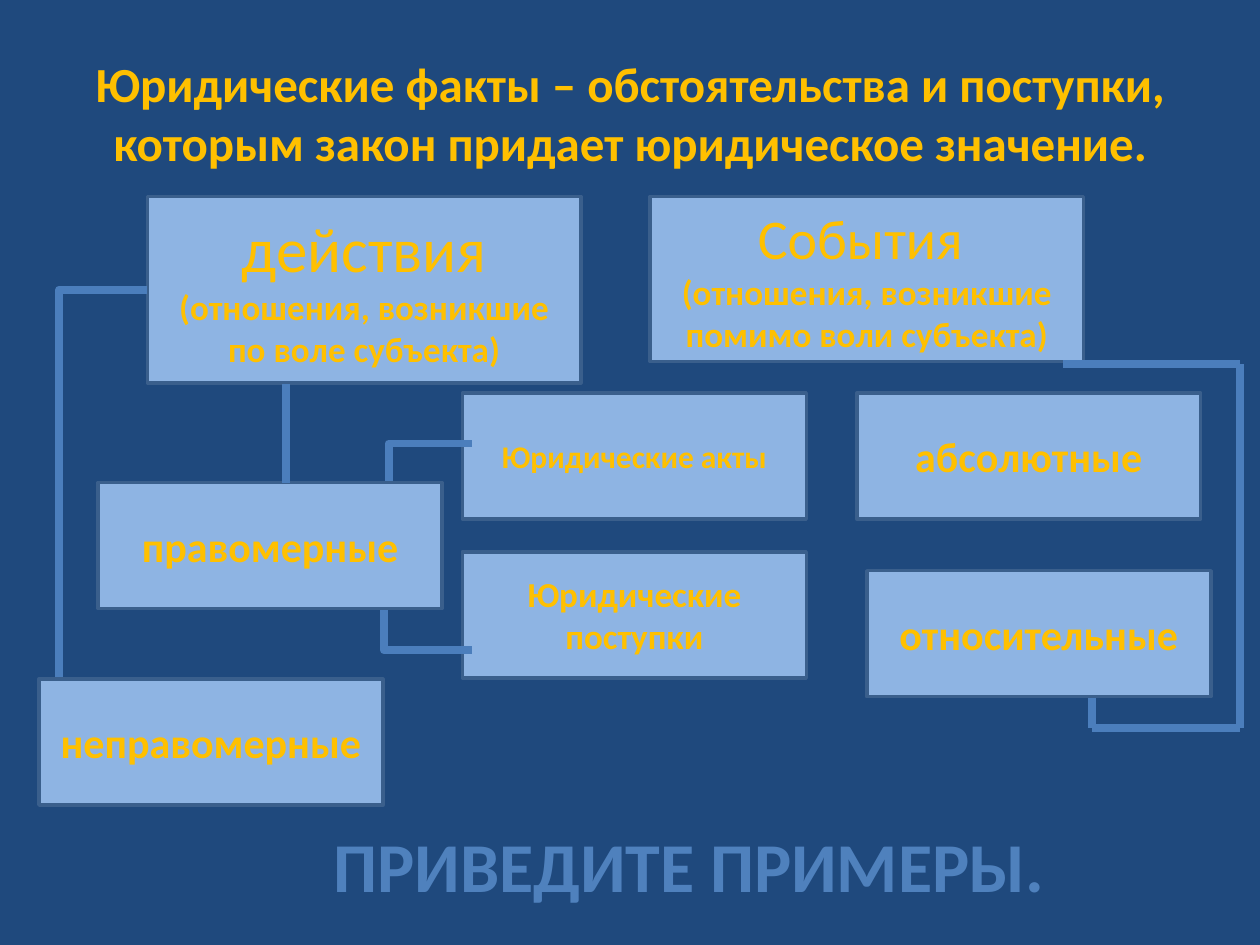
"""Build a slide that classifies legal facts into actions and events."""
from typing import NamedTuple, Optional

from lxml import etree
from pptx import Presentation
from pptx import util as u
from pptx.dml.color import RGBColor
from pptx.enum import shapes, text
from pptx.oxml import ns

NAVY = RGBColor(0x1F, 0x49, 0x7D)
GOLD = RGBColor(0xFF, 0xC0, 0x00)
SKY = RGBColor(0x8E, 0xB4, 0xE3)
BORDER = RGBColor(0x3A, 0x5F, 0x8C)
LINK_BLUE = RGBColor(0x4B, 0x7E, 0xBC)
CALL_BLUE = RGBColor(0x4F, 0x81, 0xBD)
FONT = "Calibri"
CATEGORY = (3.44, 1.48)
KIND = (2.73, 1)


class Words(NamedTuple):
    text: str
    size: int
    bold: bool = True


class Box(NamedTuple):
    left: float
    top: float
    size: tuple[float, float]
    paragraphs: list[list[Words]]


class Link(NamedTuple):
    start: tuple[float, float]
    end: tuple[float, float]
    bend: Optional[str] = None
    middle: Optional[int] = None


def kind(left: float, top: float, label: str, size: int = 24) -> Box:
    """Describe a box of the lower level."""
    return Box(left, top, KIND, [[Words(label, size)]])


def write(frame, paragraphs: list[list[Words]], color: RGBColor) -> None:
    """Fill a text frame with centred paragraphs."""
    frame.word_wrap = True
    for index, parts in enumerate(paragraphs):
        paragraph = frame.paragraphs[0] if index == 0 else frame.add_paragraph()
        paragraph.alignment = text.PP_ALIGN.CENTER
        paragraph.font.name = FONT
        paragraph.font.color.rgb = color
        uniform = len({(part.size, part.bold) for part in parts}) == 1
        for part in parts:
            run = paragraph.add_run()
            run.text = part.text
            font = paragraph.font if uniform else run.font
            font.size = u.Pt(part.size)
            font.bold = part.bold


def draw_box(slide, box: Box) -> None:
    """Draw a bordered rectangle with its text."""
    rectangle = slide.shapes.add_shape(
        shapes.MSO_SHAPE.RECTANGLE, *map(u.Inches, (box.left, box.top, *box.size)))
    rectangle.shadow.inherit = False
    rectangle.fill.solid()
    rectangle.fill.fore_color.rgb = SKY
    rectangle.line.color.rgb = BORDER
    rectangle.line.width = u.Pt(2)
    rectangle.text_frame.vertical_anchor = text.MSO_ANCHOR.MIDDLE
    write(rectangle.text_frame, box.paragraphs, GOLD)


def draw_link(slide, link: Link) -> None:
    """Draw a straight or bent connector."""
    route = shapes.MSO_CONNECTOR.ELBOW if link.bend else shapes.MSO_CONNECTOR.STRAIGHT
    connector = slide.shapes.add_connector(
        route, *map(u.Inches, (*link.start, *link.end)))
    connector.line.color.rgb = LINK_BLUE
    connector.line.width = u.Pt(4.5)
    properties = connector._element.spPr
    etree.SubElement(properties, ns.qn("a:effectLst"))
    if link.bend:
        geometry = properties.find(ns.qn("a:prstGeom"))
        geometry.set("prst", link.bend)
        if link.middle:
            guides = geometry.find(ns.qn("a:avLst"))
            etree.SubElement(guides, ns.qn("a:gd"), name="adj1",
                             fmla=f"val {link.middle}")


CONTENT = [
    Link((8.67, 5.31), (8.67, 5.78)),
    Box(1.17, 1.56, CATEGORY, [[
        Words("действия ", 36, False),
        Words("(отношения, возникшие по воле субъекта)", 20)]]),
    Box(5.16, 1.56, (3.44, 1.31), [
        [Words("События ", 32, False)],
        [Words("(отношения, возникшие помимо воли субъекта)", 20)]]),
    kind(3.67, 4.38, "Юридические поступки", 20),
    kind(3.67, 3.12, "Юридические акты", 18),
    kind(6.8, 3.12, "абсолютные"),
    kind(6.88, 4.53, "относительные"),
    Link((2.42, 3.91), (3.75, 3.52), "bentConnector3", 50000),
    Link((2.11, 4.69), (3.75, 5.16), "bentConnector3", 57100),
    Link((1.17, 2.3), (0.47, 5.47), "bentConnector2"),
    Link((8.67, 5.78), (9.84, 5.78)),
    Link((9.84, 2.89), (9.84, 5.78)),
    Link((8.44, 2.89), (9.84, 2.89)),
    kind(0.78, 3.83, "правомерные"),
    kind(0.31, 5.39, "неправомерные"),
    Link((2.27, 3.05), (2.27, 3.83)),
]


def main() -> None:
    """Assemble and save the slide."""
    deck = Presentation()
    deck.slide_width, deck.slide_height = u.Inches(10), u.Inches(7.5)
    slide = deck.slides.add_slide(deck.slide_layouts[5])
    slide.background.fill.solid()
    slide.background.fill.fore_color.rgb = NAVY

    title = slide.shapes.title
    title.left, title.top, title.width, title.height = map(
        u.Inches, (0.5, 0.3, 9, 1.18))
    title.text_frame.vertical_anchor = text.MSO_ANCHOR.MIDDLE
    write(title.text_frame, [[Words(
        "Юридические факты – обстоятельства и поступки, "
        "которым закон придает юридическое значение.", 28)]], GOLD)

    for item in CONTENT:
        if isinstance(item, Box):
            draw_box(slide, item)
        else:
            draw_link(slide, item)

    appeal = slide.shapes.add_textbox(*map(u.Inches, (1.87, 6.48, 7.19, 0.77)))
    write(appeal.text_frame, [[Words("ПРИВЕДИТЕ ПРИМЕРЫ.", 40)]], CALL_BLUE)
    deck.save("out.pptx")


if __name__ == "__main__":
    main()
